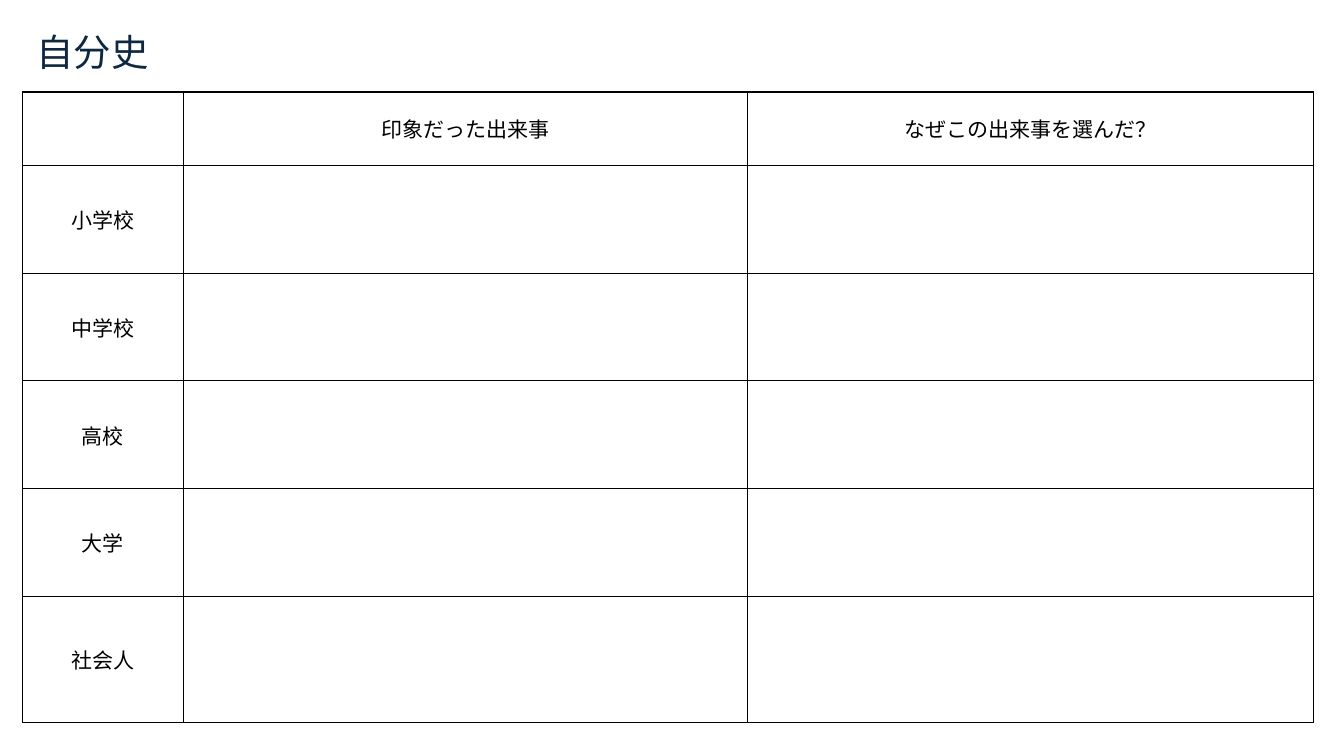
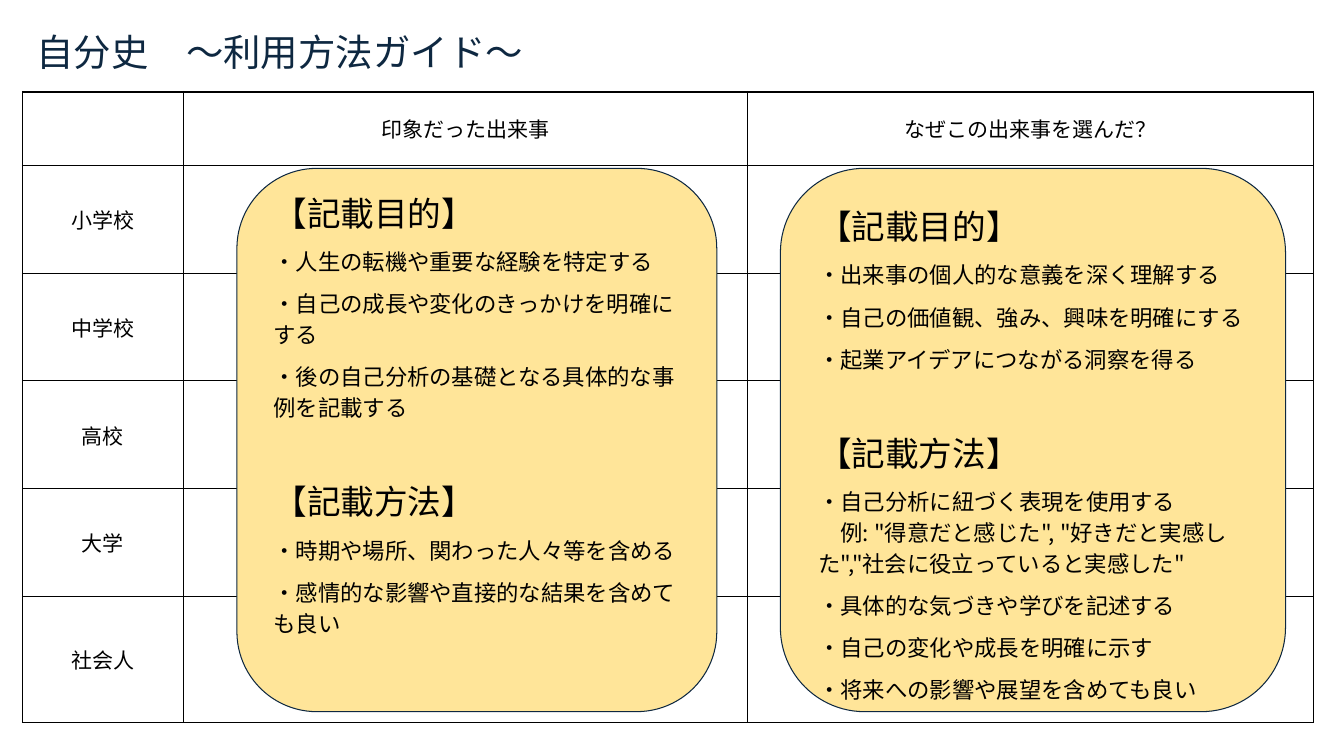
from pptx import Presentation
from pptx.dml.color import RGBColor
from pptx.enum import shapes, text
from pptx.oxml import ns, xmlchemy
from pptx.util import Inches, Pt
from lxml import etree

FONT = "Noto Sans CJK JP"
COLORS = {"navy": "0E2841", "black": "000000", "white": "FFFFFF", "gold": "FFE599"}
HEADS = ["", "印象だった出来事", "なぜこの出来事を選んだ？"]
STAGES = ["小学校", "中学校", "高校", "大学", "社会人"]
COLS = [1.6, 5.59, 5.62]
ROWS = [0.73] + [1.07] * 4 + [1.25]

GOAL, HOW = "【記載目的】", "【記載方法】"
CARDS = [
    (2.35, 4.76, 0.01, [
        (GOAL, ["・人生の転機や重要な経験を特定する",
                "・自己の成長や変化のきっかけを明確にする",
                "・後の自己分析の基礎となる具体的な事例を記載する"]),
        (HOW, ["・時期や場所、関わった人々等を含める",
               "・感情的な影響や直接的な結果を含めても良い"]),
    ]),
    (7.74, 5.01, 0.13, [
        (GOAL, ["・出来事の個人的な意義を深く理解する",
                "・自己の価値観、強み、興味を明確にする",
                "・起業アイデアにつながる洞察を得る"]),
        (HOW, ["・自己分析に紐づく表現を使用する\n"
               "　例: \"得意だと感じた\", \"好きだと実感した\",\"社会に役立っていると実感した\"",
               "・具体的な気づきや学びを記述する",
               "・自己の変化や成長を明確に示す",
               "・将来への影響や展望を含めても良い"]),
    ]),
]
SLIDES = [("自分史", 6.34, []), ("自分史　～利用方法ガイド～", 7.79, CARDS)]


def write(para, words, size=15, color="black", align="LEFT", before=0, lines=1.0):
    para.text = words
    para.alignment = getattr(text.PP_ALIGN, align)
    para.space_before = Pt(before)
    para.line_spacing = lines
    for run in para.runs:
        run.font.size = Pt(size)
        run.font.name = FONT
        run.font.color.rgb = RGBColor.from_string(COLORS[color])
        east = etree.SubElement(run.font._element, ns.qn("a:ea"))
        east.set("typeface", FONT)


def border(cell, widths):
    props = cell._tc.get_or_add_tcPr()
    for spot, (side, width) in enumerate(widths.items()):
        line = etree.Element(ns.qn("a:ln" + side), w=str(Pt(width)))
        fill = etree.SubElement(line, ns.qn("a:solidFill"))
        etree.SubElement(fill, ns.qn("a:srgbClr"), val=COLORS["black"])
        props.insert(spot, line)


deck = Presentation()
deck.slide_width, deck.slide_height = Inches(13.33), Inches(7.5)

for title, wide, cards in SLIDES:
    slide = deck.slides.add_slide(deck.slide_layouts[6])

    grid = slide.shapes.add_table(
        len(ROWS), len(COLS), Inches(0.22), Inches(0.91),
        Inches(sum(COLS)), Inches(sum(ROWS))).table
    grid.first_row = grid.horz_banding = False
    for col, width in zip(grid.columns, COLS):
        col.width = Inches(width)
    for row, height in zip(grid.rows, ROWS):
        row.height = Inches(height)
    table = [HEADS] + [[stage, "", ""] for stage in STAGES]
    for r, row in enumerate(table):
        for c, words in enumerate(row):
            cell = grid.cell(r, c)
            cell.fill.solid()
            cell.fill.fore_color.rgb = RGBColor.from_string(COLORS["white"])
            cell.vertical_anchor = text.MSO_ANCHOR.MIDDLE
            cell.margin_left = cell.margin_right = Inches(0.13)
            cell.margin_top = cell.margin_bottom = Inches(0.13)
            write(cell.text_frame.paragraphs[0], words, align="CENTER")
            border(cell, {
                "L": 1.5 if c == 1 else 0.75,
                "R": 1.5 if c == 0 else 0.75,
                "T": 1.5 if r == 0 else 0.75,
                "B": 1.5 if r == len(ROWS) - 1 else 0.75,
            })

    box = slide.shapes.add_textbox(Inches(0.23), Inches(0.16), Inches(wide), Inches(0.7))
    frame = box.text_frame
    frame.word_wrap = True
    frame.margin_left = frame.margin_right = Inches(0.13)
    frame.margin_top = frame.margin_bottom = Inches(0.13)
    write(frame.paragraphs[0], title, size=26.7, color="navy")

    for left, width, top, parts in cards:
        card = slide.shapes.add_shape(
            shapes.MSO_SHAPE.ROUNDED_RECTANGLE,
            Inches(left), Inches(1.67), Inches(width), Inches(5.39))
        card.shadow.inherit = False
        card.fill.solid()
        card.fill.fore_color.rgb = RGBColor.from_string(COLORS["gold"])
        card.line.color.rgb = RGBColor.from_string(COLORS["navy"])
        card.line.width = Pt(0.75)
        frame = card.text_frame
        frame.word_wrap = True
        frame.vertical_anchor = text.MSO_ANCHOR.TOP
        frame.margin_left = frame.margin_right = Inches(0.13)
        frame.margin_top, frame.margin_bottom = Inches(top), 0
        para = frame.paragraphs[0]
        for n, (head, items) in enumerate(parts):
            if n:
                para = frame.add_paragraph()
            write(para, head, size=24, before=43 * n)
            for item in items:
                write(frame.add_paragraph(), item, size=16, before=8, lines=1.15)

deck.save("out.pptx")
